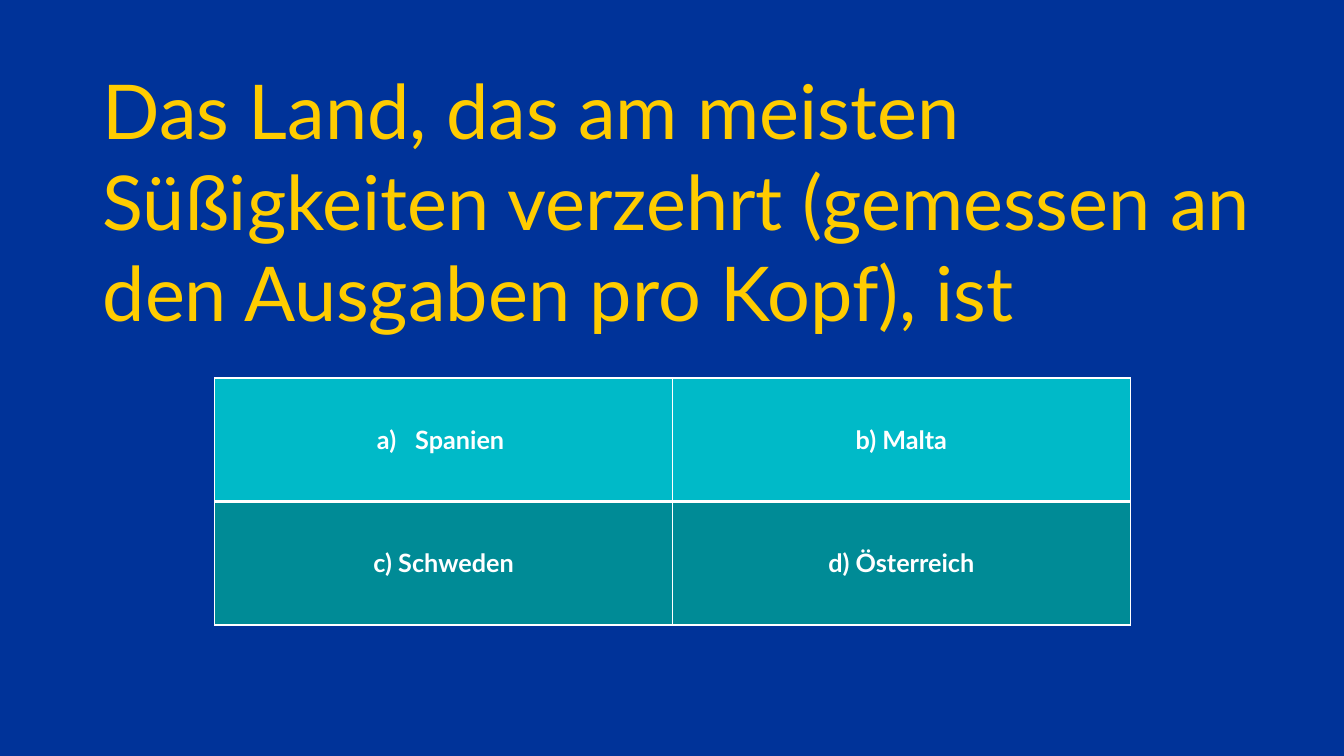
from dataclasses import dataclass

from lxml import etree
from pptx import Presentation
from pptx.dml.color import RGBColor
from pptx.enum import text
from pptx.oxml import ns
from pptx.slide import Slide
from pptx.table import Table, _Cell
from pptx.text.text import _Paragraph
from pptx.util import Inches, Pt

FONT = "Lato"
BLUE = RGBColor(0x00, 0x33, 0x99)
YELLOW = RGBColor(0xFF, 0xCC, 0x00)
WHITE = RGBColor(0xFF, 0xFF, 0xFF)
TURQUOISE = RGBColor(0x00, 0xBA, 0xC8)
TEAL = RGBColor(0x00, 0x8B, 0x96)

QUESTION = ("Das Land, das am meisten Süßigkeiten verzehrt "
            "(gemessen an den Ausgaben pro Kopf), ist")


@dataclass(frozen=True)
class Answer:
    row: int
    column: int
    label: str
    numbered: bool = False


ANSWERS = [
    Answer(0, 0, "Spanien ", numbered=True),
    Answer(0, 1, "b) Malta"),
    Answer(1, 0, "c) Schweden"),
    Answer(1, 1, "d) Österreich"),
]
ROW_FILLS = [TURQUOISE, TEAL]
# Widths in points; the line between the two rows is heavier.
ROW_BORDERS = [
    {"lnL": 1, "lnR": 1, "lnT": 1, "lnB": 3},
    {"lnL": 1, "lnR": 1, "lnT": 3, "lnB": 1},
]


def add_run(paragraph: _Paragraph, words: str, size: float,
            color: RGBColor, bold: bool = False) -> None:
    run = paragraph.add_run()
    run.text = words
    run.font.name = FONT
    run.font.size = Pt(size)
    run.font.bold = bold
    run.font.color.rgb = color


def add_borders(cell: _Cell, widths: dict[str, float]) -> None:
    properties = cell._tc.get_or_add_tcPr()
    for side, width in widths.items():
        line = etree.SubElement(properties, ns.qn(f"a:{side}"), w=str(Pt(width)))
        fill = etree.SubElement(line, ns.qn("a:solidFill"))
        etree.SubElement(fill, ns.qn("a:srgbClr"), val=str(WHITE))


def number_with_letter(paragraph: _Paragraph) -> None:
    """Number the paragraph a), with a hanging indent."""
    properties = paragraph._p.get_or_add_pPr()
    indent = Inches(0.38)
    properties.set("marL", str(indent))
    properties.set("indent", str(-indent))
    etree.SubElement(properties, ns.qn("a:buAutoNum"), type="alphaLcParenR")


def add_question(slide: Slide) -> None:
    box = slide.shapes.add_textbox(Inches(0.92), Inches(0.4),
                                   Inches(12.08), Inches(3.17))
    frame = box.text_frame
    frame.word_wrap = True
    frame.vertical_anchor = text.MSO_ANCHOR.MIDDLE
    add_run(frame.paragraphs[0], QUESTION, 54, YELLOW)


def fill_answer(table: Table, answer: Answer) -> None:
    cell = table.cell(answer.row, answer.column)
    add_borders(cell, ROW_BORDERS[answer.row])
    cell.fill.solid()
    cell.fill.fore_color.rgb = ROW_FILLS[answer.row]
    cell.vertical_anchor = text.MSO_ANCHOR.MIDDLE
    paragraph = cell.text_frame.paragraphs[0]
    paragraph.alignment = text.PP_ALIGN.CENTER
    if answer.numbered:
        number_with_letter(paragraph)
    add_run(paragraph, answer.label, 18, WHITE, bold=True)


def add_answers(slide: Slide) -> None:
    frame = slide.shapes.add_table(2, 2, Inches(2.13), Inches(3.75),
                                   Inches(9.08), Inches(2.45))
    for answer in ANSWERS:
        fill_answer(frame.table, answer)


def main() -> None:
    presentation = Presentation()
    presentation.slide_width = Inches(13.33)
    presentation.slide_height = Inches(7.5)
    slide = presentation.slides.add_slide(presentation.slide_layouts[6])
    slide.background.fill.solid()
    slide.background.fill.fore_color.rgb = BLUE
    add_question(slide)
    add_answers(slide)
    presentation.save("out.pptx")


if __name__ == "__main__":
    main()
